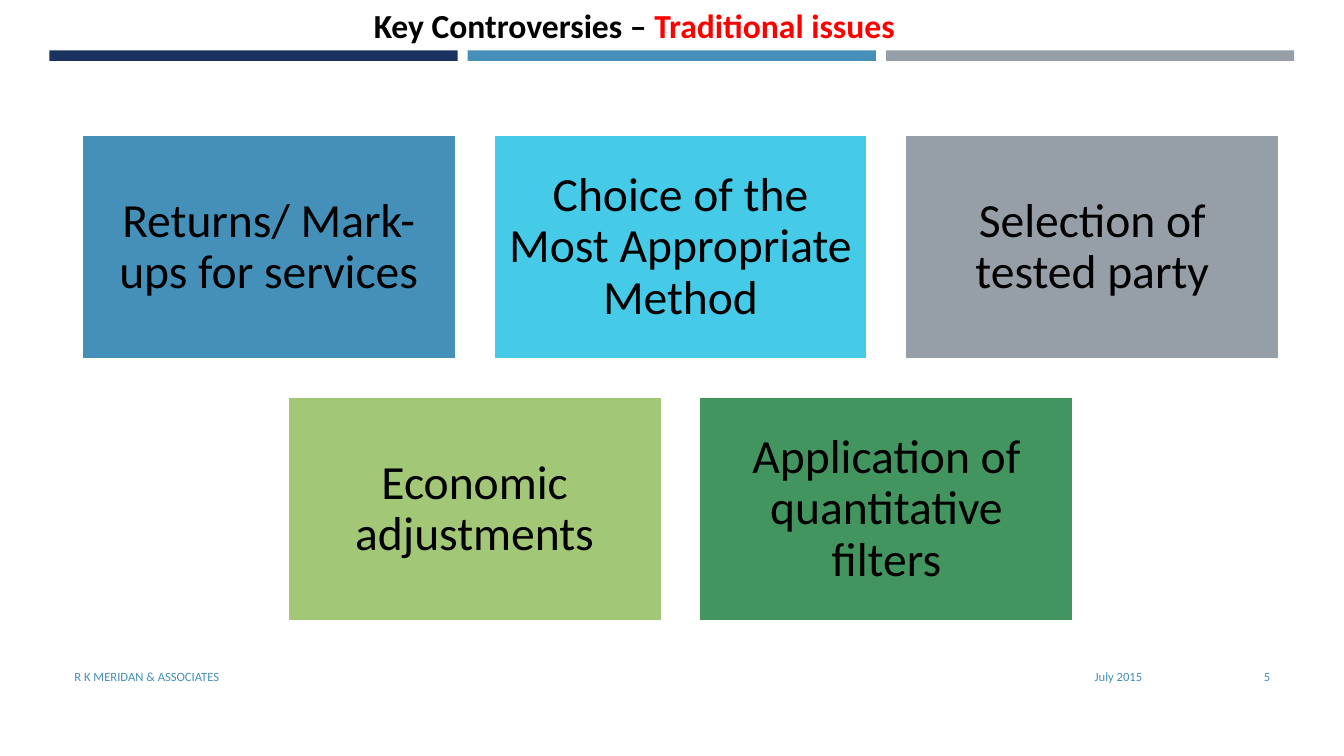
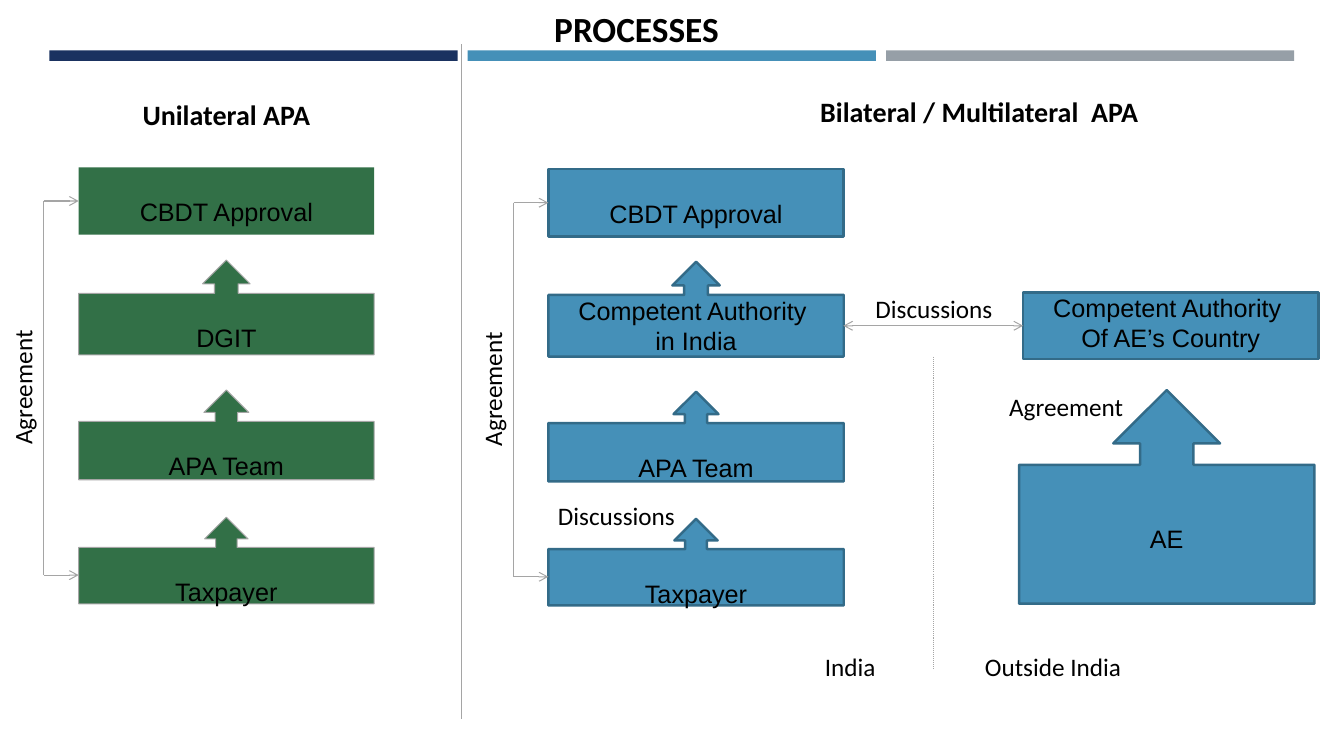
"""Build two slides on transfer pricing controversies and agreement processes."""
from dataclasses import dataclass
from typing import Optional

from pptx import Presentation
from pptx.dml.color import RGBColor
from pptx.enum.dml import MSO_LINE
from pptx.enum.shapes import MSO_CONNECTOR, MSO_SHAPE
from pptx.enum.text import MSO_ANCHOR, PP_ALIGN
from pptx.oxml.ns import qn
from pptx.oxml.xmlchemy import OxmlElement
from pptx.presentation import Presentation as Deck
from pptx.shapes.autoshape import Shape
from pptx.shapes.connector import Connector
from pptx.slide import Slide
from pptx.text.text import TextFrame
from pptx.util import Pt


@dataclass(frozen=True)
class Theme:
    """Colours, fonts and type sizes."""
    navy: str = "1A3260"
    blue: str = "4590B8"
    gray: str = "969FA7"
    cyan: str = "45CBE8"
    lime: str = "A2C777"
    green: str = "42955F"
    forest: str = "327047"
    steel: str = "336B88"
    rule: str = "A5A5A5"
    black: str = "000000"
    white: str = "FFFFFF"
    red: str = "FF0000"
    font: str = "Calibri"
    box_font: str = "Arial"
    footer_size: float = 9
    label_size: float = 18
    heading_size: float = 20
    title_size: float = 24
    process_title_size: float = 25.2
    card_size: float = 34


THEME = Theme()


@dataclass(frozen=True)
class Area:
    """A rectangle in points."""
    left: float
    top: float
    width: float
    height: float


@dataclass(frozen=True)
class Span:
    """A run of text in one colour."""
    text: str
    color: str = THEME.black


@dataclass(frozen=True)
class Style:
    """How the text of one frame is set."""
    size: float = THEME.label_size
    font: str = THEME.font
    bold: bool = False
    align: PP_ALIGN = PP_ALIGN.CENTER
    anchor: MSO_ANCHOR = MSO_ANCHOR.TOP
    wrap: bool = False
    inset_x: float = 5
    inset_y: float = 0
    spacing: Optional[float] = None


@dataclass(frozen=True)
class Look:
    """Fill and outline of a shape."""
    fill: str
    line: Optional[str] = None
    weight: float = 1.75


@dataclass(frozen=True)
class Step:
    """One box of a process column."""
    lines: tuple[str, ...]
    top: float
    height: float
    callout: bool = True
    drop: float = 20.7


TITLE = Style(THEME.title_size, bold=True, align=PP_ALIGN.LEFT, anchor=MSO_ANCHOR.MIDDLE, wrap=True, inset_x=7.2)
HEADING = Style(THEME.heading_size, bold=True)
CARD = Style(THEME.card_size, anchor=MSO_ANCHOR.MIDDLE, wrap=True, inset_x=10, inset_y=10, spacing=0.9)
LABEL = Style()
BLUE_BOX = Look(THEME.blue, THEME.steel)
GREEN_BOX = Look(THEME.forest)
GREEN_CALLOUT = Look(THEME.forest, THEME.rule, 0.75)
BOX_WIDTH = 211
COLUMN_LEFT = 56.2
COLUMN_SHIFT = 335.5
COLUMN_DROP = 1.2


def write_text(frame: TextFrame, lines: list[list[Span]], style: Style, drop: float = 0) -> None:
    """Fill a text frame line by line and run by run."""
    frame.word_wrap = style.wrap
    frame.vertical_anchor = style.anchor
    frame.margin_left = frame.margin_right = Pt(style.inset_x)
    frame.margin_top = Pt(style.inset_y + drop)
    frame.margin_bottom = Pt(style.inset_y)
    for index, spans in enumerate(lines):
        para = frame.add_paragraph() if index else frame.paragraphs[0]
        para.alignment = style.align
        if style.spacing:
            para.line_spacing = style.spacing
        for span in spans:
            run = para.add_run()
            run.text = span.text
            run.font.name = style.font
            run.font.size = Pt(style.size)
            run.font.bold = style.bold
            run.font.color.rgb = RGBColor.from_string(span.color)


def add_text(page: Slide, area: Area, spans: list[Span], style: Style, rotation: float = 0) -> None:
    """Add a text box holding one line of spans."""
    box = page.shapes.add_textbox(Pt(area.left), Pt(area.top), Pt(area.width), Pt(area.height))
    box.rotation = rotation
    write_text(box.text_frame, [spans], style)


def add_box(page: Slide, area: Area, look: Look, kind: MSO_SHAPE = MSO_SHAPE.RECTANGLE) -> Shape:
    """Add a flat filled shape."""
    box = page.shapes.add_shape(kind, Pt(area.left), Pt(area.top), Pt(area.width), Pt(area.height))
    box.shadow.inherit = False
    box.fill.solid()
    box.fill.fore_color.rgb = RGBColor.from_string(look.fill)
    if look.line:
        box.line.color.rgb = RGBColor.from_string(look.line)
        box.line.width = Pt(look.weight)
    else:
        box.line.fill.background()
    return box


def add_line(page: Slide, start: tuple[float, float], end: tuple[float, float],
             arrows: tuple[str, ...] = (), dotted: bool = False) -> Connector:
    """Add a thin straight line with optional arrowheads."""
    line = page.shapes.add_connector(MSO_CONNECTOR.STRAIGHT, Pt(start[0]), Pt(start[1]), Pt(end[0]), Pt(end[1]))
    line.line.color.rgb = RGBColor.from_string(THEME.rule)
    line.line.width = Pt(0.75)
    if dotted:
        line.line.dash_style = MSO_LINE.ROUND_DOT
    properties = line.element.spPr
    outline = properties.find(qn("a:ln"))
    for arrow in arrows:
        tip = OxmlElement(arrow)
        tip.set("type", "arrow")
        outline.append(tip)
    properties.append(OxmlElement("a:effectLst"))
    return line


def add_page(deck: Deck, area: Area, title: list[Span], size: float) -> Slide:
    """Add a blank page with the three bands and a title."""
    page = deck.slides.add_slide(deck.slide_layouts[6])
    for index, color in enumerate((THEME.navy, THEME.blue, THEME.gray)):
        add_box(page, Area(35.3 + index * 298.8, 36, 291.6, 7.5), Look(color))
    style = Style(size, TITLE.font, True, TITLE.align, TITLE.anchor, True, TITLE.inset_x)
    add_text(page, area, title, style)
    return page


def add_step(page: Slide, left: float, step: Step, look: Look) -> Shape:
    """Add a labelled box or up-arrow callout."""
    kind = MSO_SHAPE.UP_ARROW_CALLOUT if step.callout else MSO_SHAPE.RECTANGLE
    box = add_box(page, Area(left, step.top, BOX_WIDTH, step.height), look, kind)
    style = Style(font=THEME.box_font)
    write_text(box.text_frame, [[Span(line)] for line in step.lines], style, step.drop)
    return box


def add_column(page: Slide, column: int, second: Step, callout: Look, approval: Look) -> None:
    """Add a process column with its agreement bracket."""
    left = COLUMN_LEFT + column * COLUMN_SHIFT
    down = column * COLUMN_DROP
    top_box = add_step(page, left, Step(("CBDT Approval",), 119.5 + down, 48.2, False), approval)
    for step in (second, Step(("APA Team",), 278.6 + down, 64.1), Step(("Taxpayer",), 369.4 + down, 61.9)):
        add_step(page, left, step, callout)
    spine, high, low = left - 24.8, 143.6 + down, 410.8 + down
    add_line(page, (spine, high), (spine, low))
    add_line(page, (spine, high), (left, high), ("a:tailEnd",)).end_connect(top_box, 1)
    add_line(page, (spine, low), (left, low), ("a:tailEnd",))
    add_text(page, Area(left - 82.8, 253.4 + down, 110.2, 46.8), [Span("Agreement")], LABEL, 270)


def build_controversies(deck: Deck) -> None:
    """Build the page of traditional issues."""
    title = [Span("Key Controversies – "), Span("Traditional issues", THEME.red)]
    page = add_page(deck, Area(259.9, 0, 437, 36), title, THEME.title_size)
    rows = (
        (("Returns/ Mark-ups for services", THEME.blue), ("Choice of the Most Appropriate Method", THEME.cyan),
         ("Selection of tested party", THEME.gray)),
        (("Economic adjustments", THEME.lime), ("Application of quantitative filters", THEME.green)),
    )
    width, height, gap, center = 267.4, 160.4, 26.75, 486.1
    for row, cards in enumerate(rows):
        left = center - (len(cards) * (width + gap) - gap) / 2
        for index, (text, color) in enumerate(cards):
            area = Area(left + index * (width + gap), 96.5 + row * (height + gap), width, height)
            card = add_box(page, area, Look(color, THEME.white))
            write_text(card.text_frame, [[Span(text)]], CARD)
    for text, left, wide, align in (("R K MERIDAN & ASSOCIATES", 46.1, 544.3, PP_ALIGN.LEFT),
                                    ("July 2015", 599, 224, PP_ALIGN.RIGHT), ("5", 831.6, 82.8, PP_ALIGN.RIGHT)):
        style = Style(THEME.footer_size, align=align, anchor=MSO_ANCHOR.MIDDLE, wrap=True, inset_x=7.2)
        add_text(page, Area(left, 468.7, wide, 28.8), [Span(text, THEME.blue)], style)


def build_processes(deck: Deck) -> None:
    """Build the page comparing unilateral and bilateral agreements."""
    page = add_page(deck, Area(388.8, 2, 300, 36), [Span("PROCESSES")], THEME.process_title_size)
    add_text(page, Area(56.2, 69.8, BOX_WIDTH, 34.6), [Span("Unilateral APA")], HEADING)
    add_text(page, Area(564.5, 67.7, 270, 34.6), [Span("Bilateral / Multilateral  APA")], HEADING)
    add_line(page, (329.8, 31.7), (329.8, 513.4))
    add_column(page, 0, Step(("DGIT",), 185.8, 67.7), GREEN_CALLOUT, GREEN_BOX)
    authority = Step(("Competent Authority ", "in India"), 187, 67.7, drop=0)
    add_column(page, 1, authority, BLUE_BOX, BLUE_BOX)
    foreign = Step(("Competent Authority ", "Of AE’s Country"), 208.8, 47.8, False, 0)
    foreign_box = add_step(page, 730.8, foreign, BLUE_BOX)
    add_step(page, 727.9, Step(("AE",), 278.6, 152.6, drop=41.4), BLUE_BOX)
    talks = add_line(page, (602.4, 232.7), (730.8, 232.7), ("a:headEnd", "a:tailEnd"))
    talks.end_connect(foreign_box, 1)
    add_line(page, (666.7, 254.9), (666.7, 478.1), dotted=True)
    for text, left, top in (("Discussions", 593.3, 209.5), ("Discussions", 366.5, 357.1),
                            ("Agreement ", 689.8, 279.4), ("India", 533.5, 465.1), ("Outside India ", 680.4, 465.1)):
        add_text(page, Area(left, top, 147.6, 34.6), [Span(text)], LABEL)


def main() -> None:
    """Build and save the deck."""
    deck = Presentation()
    deck.slide_width, deck.slide_height = Pt(960), Pt(540)
    build_controversies(deck)
    build_processes(deck)
    deck.save("out.pptx")


if __name__ == "__main__":
    main()
